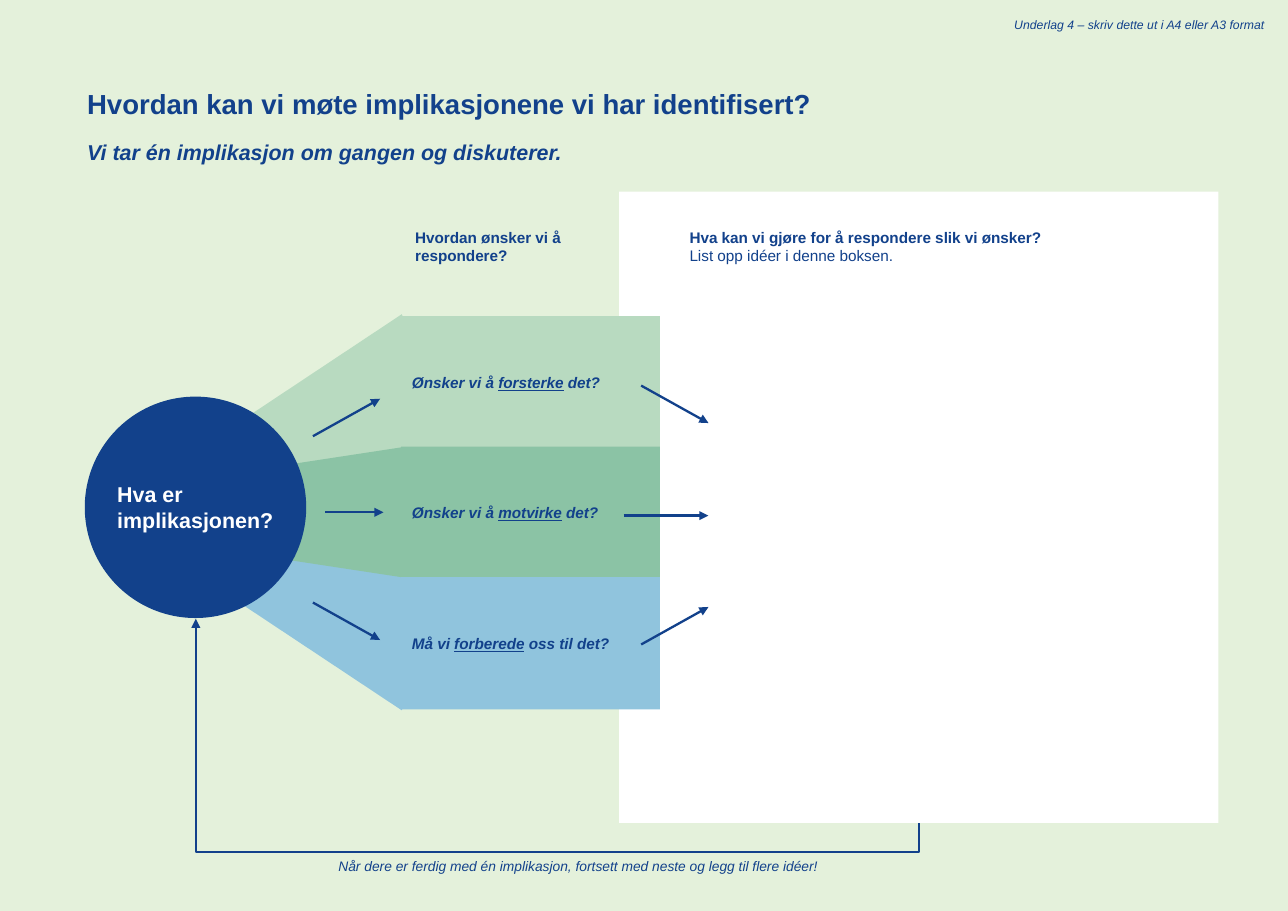
"""Builds the worksheet slide on how to respond to one implication at a time."""
from lxml import etree
from pptx import Presentation
from pptx.dml.color import RGBColor
from pptx.enum.shapes import MSO_CONNECTOR, MSO_SHAPE
from pptx.enum.text import MSO_ANCHOR, MSO_AUTO_SIZE, PP_ALIGN
from pptx.oxml.ns import qn
from pptx.util import Pt

RECTANGLE, ELLIPSE, TRAPEZOID = MSO_SHAPE.RECTANGLE, MSO_SHAPE.OVAL, MSO_SHAPE.TRAPEZOID
STRAIGHT, ELBOW = MSO_CONNECTOR.STRAIGHT, MSO_CONNECTOR.ELBOW
LEFT, CENTER, RIGHT = PP_ALIGN.LEFT, PP_ALIGN.CENTER, PP_ALIGN.RIGHT
TOP, MIDDLE = MSO_ANCHOR.TOP, MSO_ANCHOR.MIDDLE
TITLE_ONLY = 5

FONT = "Arial"
NAVY, WHITE, BACKGROUND = "12418B", "FFFFFF", "E4F1DB"
SLIDE_SIZE = (841.7, 595.4)

IDEA_BOX = (404.6, 125.3, 391.7, 412.6)
CIRCLE = (55.4, 259.2, 144.7, 144.7)
CIRCLE_TEXT = [[("Hva er implikasjonen?", "b")]]

TITLE_BOX = (49, 49, 616.3, 38.2)
TITLE = [[("Hvordan kan vi møte implikasjonene vi har identifisert?", "b")]]

RESPONSES = [
    ("B8DAC0", "Ønsker vi å ", "forsterke", " det?"),
    ("8BC3A5", "Ønsker vi å ", "motvirke", " det?"),
    ("90C4DD", "Må vi ", "forberede", " oss til det?"),
]
ROW_LEFT, ROW_TOP, ROW_WIDTH, ROW_HEIGHT, ROW_PITCH = 262.1, 206.6, 169.2, 86.4, 85.3

WEDGE_WIDTH, WEDGE_HEIGHT, WEDGE_TAPER = 85.4, 136.8, 0.244
WEDGE_MIDDLE, WEDGE_STEP, WEDGE_TURN = 334.8, 61.9, 24.9
WEDGE_CENTERS = [218.5, 195.8, 218.5]
WEDGE_ORDER = [2, 0, 1]

ARROWS = [
    (204.5, 285.1, 248.4, 260.6),
    (212.4, 334.8, 250.6, 334.8),
    (204.5, 393.8, 248.4, 418.3),
    (419, 252, 463, 276.5),
    (407.5, 337, 463, 337),
    (419, 421.2, 463, 396.7),
]
LOOP_START, LOOP_END, LOOP_DROP = (600.5, 537.9), (128, 404.4), 18.8

NOTES = [
    ((443.5, 141.8, 344.2, 38.9), 7.2, 10, LEFT,
     [[("Hva kan vi gjøre for å respondere slik vi ønsker?", "b")],
      [("List opp idéer i denne boksen.", "")]]),
    ((49, 82.8, 373.7, 33.1), 7.9, 14, LEFT,
     [[("Vi tar én implikasjon om gangen og diskuterer.", "bi")]]),
    ((128.2, 555.1, 499, 26.6), 7.9, 9, CENTER,
     [[("Når dere er ferdig med én implikasjon, fortsett med neste og legg til flere idéer!", "i")]]),
    ((629.3, 6.5, 205.2, 25.9), 7.9, 8, RIGHT,
     [[("Underlag 4 – skriv dette ut i A4 eller A3 format", "i")]]),
    ((264.2, 141.8, 133.2, 38.9), 7.2, 10, LEFT,
     [[("Hvordan ønsker vi å respondere?", "b")]]),
]


def color(value):
    return RGBColor.from_string(value)


def points(values):
    return [Pt(value) for value in values]


def write(shape, lines, size, inset, align=LEFT, anchor=TOP, ink=NAVY, grow=False):
    frame = shape.text_frame
    frame.word_wrap = True
    frame.auto_size = MSO_AUTO_SIZE.SHAPE_TO_FIT_TEXT if grow else MSO_AUTO_SIZE.NONE
    frame.vertical_anchor = anchor
    frame.margin_left = frame.margin_right = Pt(inset)
    frame.margin_top = frame.margin_bottom = Pt(inset)
    for index, runs in enumerate(lines):
        paragraph = frame.add_paragraph() if index else frame.paragraphs[0]
        paragraph.alignment = align
        for text, style in runs:
            run = paragraph.add_run()
            run.text = text
            font = run.font
            font.name, font.size = FONT, Pt(size)
            font.bold, font.italic = "b" in style, "i" in style
            font.underline = "u" in style
            font.color.rgb = color(ink)


def add_block(slide, kind, box, fill):
    shape = slide.shapes.add_shape(kind, *points(box))
    shape.shadow.inherit = False
    shape.fill.solid()
    shape.fill.fore_color.rgb = color(fill)
    shape.line.fill.background()
    return shape


def add_arrow(slide, kind, ends):
    arrow = slide.shapes.add_connector(kind, *points(ends))
    arrow.line.color.rgb = color(NAVY)
    arrow.line.width = Pt(1.5)
    properties = arrow._element.spPr
    etree.SubElement(properties.find(qn("a:ln")), qn("a:tailEnd"), type="triangle")
    etree.SubElement(properties, qn("a:effectLst"))
    return arrow


def add_wedge(slide, index):
    offset = index - 1
    left = WEDGE_CENTERS[index] - WEDGE_WIDTH / 2
    top = WEDGE_MIDDLE + offset * WEDGE_STEP - WEDGE_HEIGHT / 2
    box = (left, top, WEDGE_WIDTH, WEDGE_HEIGHT)
    wedge = add_block(slide, TRAPEZOID, box, RESPONSES[index][0])
    wedge.adjustments[0] = WEDGE_TAPER
    wedge.rotation = 270 + offset * WEDGE_TURN


def add_loop(slide):
    (start_x, start_y), (end_x, end_y) = LOOP_START, LOOP_END
    width, height = start_y - end_y, start_x - end_x
    left = (start_x + end_x - width) / 2
    top = (start_y + end_y - height) / 2
    loop = add_arrow(slide, ELBOW, (left, top, left + width, top + height))
    properties = loop._element.spPr
    transform = properties.find(qn("a:xfrm"))
    transform.set("rot", str(90 * 60000))
    transform.set("flipH", "1")
    geometry = properties.find(qn("a:prstGeom"))
    guides = geometry.find(qn("a:avLst"))
    bend = round(-LOOP_DROP / width * 100000)
    etree.SubElement(guides, qn("a:gd"), name="adj1", fmla=f"val {bend}")


def main():
    presentation = Presentation()
    presentation.slide_width, presentation.slide_height = points(SLIDE_SIZE)
    slide = presentation.slides.add_slide(presentation.slide_layouts[TITLE_ONLY])
    slide.background.fill.solid()
    slide.background.fill.fore_color.rgb = color(BACKGROUND)

    title = slide.shapes.title
    title.left, title.top, title.width, title.height = points(TITLE_BOX)
    write(title, TITLE, 18, 7.9, grow=True)

    add_block(slide, RECTANGLE, IDEA_BOX, WHITE)
    for index in WEDGE_ORDER:
        add_wedge(slide, index)
    circle = add_block(slide, ELLIPSE, CIRCLE, NAVY)
    write(circle, CIRCLE_TEXT, 14, 0, anchor=MIDDLE, ink=WHITE)

    for index, (fill, before, keyword, after) in enumerate(RESPONSES):
        box = (ROW_LEFT, ROW_TOP + index * ROW_PITCH, ROW_WIDTH, ROW_HEIGHT)
        row = add_block(slide, RECTANGLE, box, fill)
        runs = [(before, "bi"), (keyword, "biu"), (after, "bi")]
        write(row, [runs], 10, 7.2, anchor=MIDDLE)

    for ends in ARROWS:
        add_arrow(slide, STRAIGHT, ends)
    add_loop(slide)

    for box, inset, size, align, lines in NOTES:
        note = slide.shapes.add_textbox(*points(box))
        write(note, lines, size, inset, align, grow=True)

    presentation.save("out.pptx")


if __name__ == "__main__":
    main()
